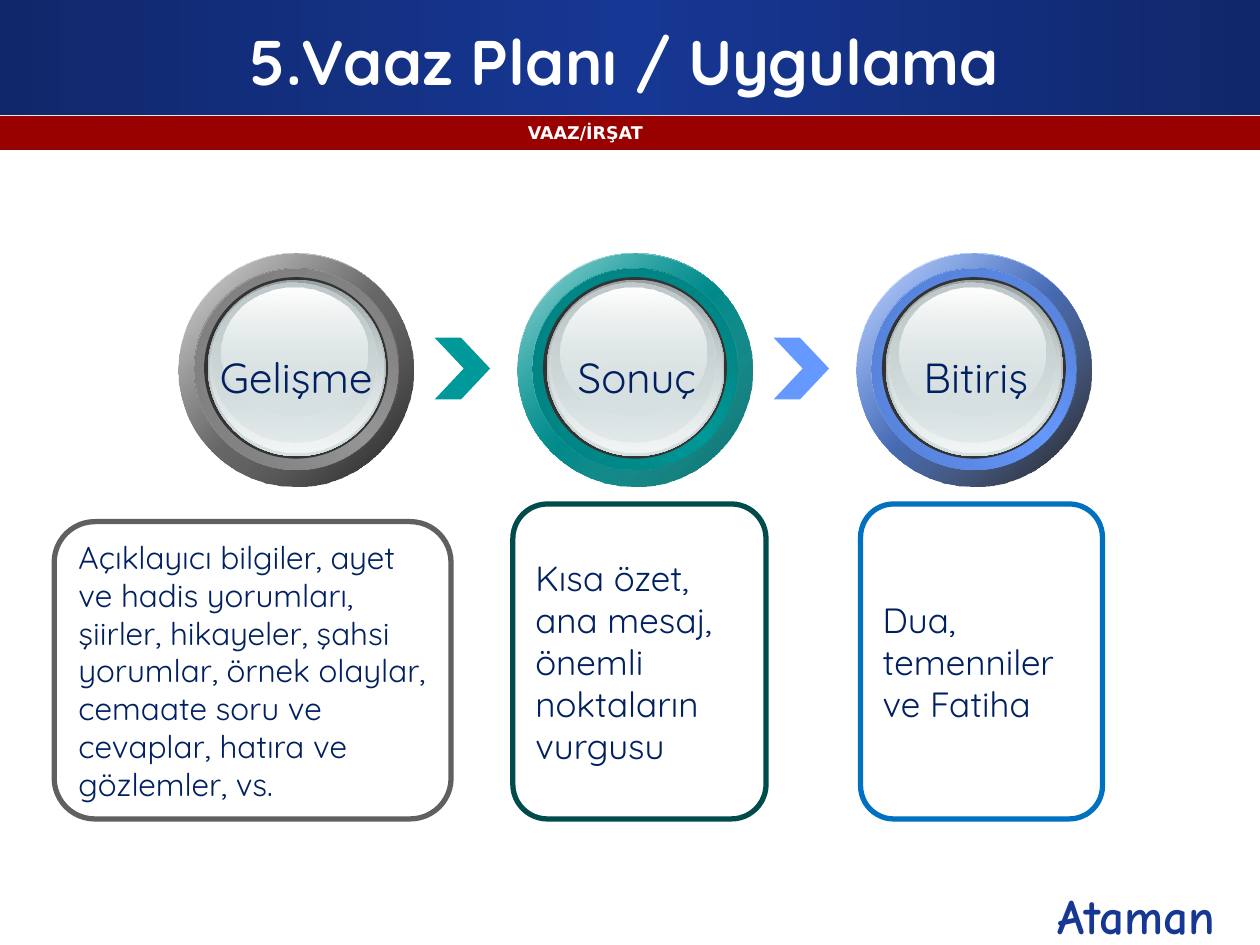
"""Build the sermon plan slide: three glossy stages with their descriptions."""
from dataclasses import dataclass
from typing import NamedTuple, Optional

from lxml.etree import SubElement
from pptx import Presentation
from pptx.dml.color import RGBColor
from pptx.enum.shapes import MSO_SHAPE
from pptx.enum.text import MSO_ANCHOR, MSO_AUTO_SIZE, PP_ALIGN
from pptx.oxml.ns import qn
from pptx.util import Inches, Pt

COLORS = {
    "white": "FFFFFF", "black": "000000", "navy": "10276A", "royal": "163794",
    "red": "990000", "text": "002060", "rim": "333333", "steel": "99A1A2",
    "mist": "D6E1E2", "frost": "F2F5F5", "haze": "C1CBCC",
    "gray": "969696", "gray mid": "737373", "gray soft": "7B7B7B", "gray box": "606060",
    "teal": "009999", "teal mid": "007575", "teal soft": "007E7E",
    "teal deep": "006D6D", "teal box": "004C4C",
    "blue": "6699FF", "blue mid": "4E75C3", "blue soft": "547ED1", "blue box": "0070C0",
}
FONT = "Quicksand"
STAGE_LEFT, STAGE_TOP, STAGE_STEP = 1.42, 2.01, 2.69


class Stop(NamedTuple):
    position: int
    color: str
    opacity: int = 100


class Area(NamedTuple):
    left: float
    top: float
    width: float
    height: float

    def shifted(self, left: float, top: float) -> "Area":
        return Area(self.left + left, self.top + top, self.width, self.height)

    def lengths(self) -> list:
        return [Inches(value) for value in self]


class Layer(NamedTuple):
    area: Area
    stops: list
    angle: int = 0


@dataclass
class Stage:
    label: str
    label_area: Area
    hue: str
    shade: Stop
    detail: str
    detail_size: int
    box: Area


STAGES = [
    Stage("Gelişme", Area(1.59, 2.74, 1.52, 0.5), "gray", Stop(100, "black", 90),
          "Açıklayıcı bilgiler, ayet ve hadis yorumları, şiirler, hikayeler, şahsi yorumlar, "
          "örnek olaylar, cemaate soru ve cevaplar, hatıra ve gözlemler, vs.",
          18, Area(0.43, 4.14, 3.15, 2.36)),
    Stage("Sonuç", Area(4.44, 2.74, 1.23, 0.5), "teal", Stop(100, "teal deep"),
          "Kısa özet, ana mesaj, önemli noktaların vurgusu",
          20, Area(4.07, 4, 2.01, 2.5)),
    Stage("Bitiriş", Area(7.17, 2.74, 1.15, 0.5), "blue", Stop(100, "black", 90),
          "Dua, temenniler ve Fatiha", 20, Area(6.83, 4, 1.92, 2.5)),
]

LENS = [
    Layer(Area(0.23, 0.21, 1.41, 1.4), [Stop(0, "steel"), Stop(100, "mist")], 90),
    Layer(Area(0.24, 0.22, 1.38, 1.36), [Stop(0, "mist", 0), Stop(100, "frost")], 90),
    Layer(Area(0.26, 0.23, 1.31, 1.27), [Stop(0, "haze"), Stop(100, "mist", 48)], 90),
    Layer(Area(0.34, 0.27, 1.16, 1.03), [Stop(0, "white"), Stop(100, "mist", 38)], 90),
]


def rgb(color: str) -> RGBColor:
    return RGBColor.from_string(COLORS[color])


def paint(shape, stops: list, angle: int) -> None:
    """Fill with one solid colour or with a clockwise-angled gradient."""
    if len(stops) == 1:
        shape.fill.solid()
        shape.fill.fore_color.rgb = rgb(stops[0].color)
        return
    shape.fill.gradient()
    shape.fill.gradient_angle = -angle % 360
    stop_list = next(shape.element.iter(qn("a:gsLst")))
    for preset in list(stop_list):
        stop_list.remove(preset)
    for stop in stops:
        mark = SubElement(stop_list, qn("a:gs"), pos=str(stop.position * 1000))
        tone = SubElement(mark, qn("a:srgbClr"), val=COLORS[stop.color])
        if stop.opacity < 100:
            SubElement(tone, qn("a:alpha"), val=str(stop.opacity * 1000))


def add_figure(slide, preset: MSO_SHAPE, area: Area, stops: list, angle: int = 0,
               adjustment: Optional[float] = None):
    """Add a preset shape without outline or shadow."""
    figure = slide.shapes.add_shape(preset, *area.lengths())
    figure.shadow.inherit = False
    figure.line.fill.background()
    if adjustment is not None:
        figure.adjustments[0] = adjustment
    if stops:
        paint(figure, stops, angle)
    else:
        figure.fill.background()
    return figure


def write(shape, wording: str, size: int, color: str, align: PP_ALIGN,
          font: str = FONT, bold: bool = False, wrap: bool = True) -> None:
    """Set the wording of a shape and format it."""
    frame = shape.text_frame
    frame.text = wording
    frame.word_wrap = wrap
    paragraph = frame.paragraphs[0]
    paragraph.alignment = align
    for run in paragraph.runs:
        run.font.name = font
        run.font.size = Pt(size)
        run.font.bold = bold
        run.font.color.rgb = rgb(color)


def add_header(slide) -> None:
    """Draw the banner, the strip, the title and the signature."""
    banner = [Stop(0, "navy"), Stop(50, "royal"), Stop(100, "navy")]
    add_figure(slide, MSO_SHAPE.RECTANGLE, Area(0, 0, 10, 0.91), banner)
    add_figure(slide, MSO_SHAPE.RECTANGLE, Area(0, 0.92, 10, 0.27), [Stop(0, "red")])
    signature = slide.shapes.add_textbox(*Area(6.57, 6.98, 3.17, 0.35).lengths())
    write(signature, "Ataman", 28, "royal", PP_ALIGN.RIGHT, "Comic Neue", True)
    subject = slide.shapes.add_textbox(*Area(0.02, 0.92, 9.25, 0.25).lengths())
    write(subject, "VAAZ/İRŞAT", 10, "white", PP_ALIGN.CENTER, "DejaVu Sans", True)

    title = slide.shapes.title
    slide.shapes.element.append(title.element)
    title.left, title.top, title.width, title.height = Area(0.33, 0.17, 9.25, 0.62).lengths()
    write(title, "5.Vaaz Planı / Uygulama", 36, "white", PP_ALIGN.CENTER, bold=True)
    title.text_frame.vertical_anchor = MSO_ANCHOR.MIDDLE
    title.text_frame.auto_size = MSO_AUTO_SIZE.NONE


def ring_layers(stage: Stage) -> list:
    """Return the coloured ring and dark rim around a lens, back to front."""
    hue, mid, soft = stage.hue, f"{stage.hue} mid", f"{stage.hue} soft"
    outer, inner = Area(0, 0, 1.86, 1.85), Area(0.12, 0.12, 1.62, 1.6)
    return [
        Layer(outer, [Stop(0, "white"), Stop(50, hue), Stop(100, "white")], 45),
        Layer(outer, [Stop(0, hue, 32), stage.shade], 45),
        Layer(inner, [Stop(0, mid), Stop(50, hue), Stop(100, mid)], 315),
        Layer(inner, [Stop(0, soft), Stop(100, hue, 0)], 45),
        Layer(Area(0.2, 0.19, 1.46, 1.44), [Stop(0, "rim")]),
    ]


def add_stage(slide, stage: Stage, index: int) -> None:
    """Draw one stage: description box, incoming chevron, button and label."""
    box = add_figure(slide, MSO_SHAPE.ROUNDED_RECTANGLE, stage.box, [], adjustment=0.137)
    box.line.color.rgb = rgb(f"{stage.hue} box")
    box.line.width = Pt(3)
    write(box, stage.detail, stage.detail_size, "text", PP_ALIGN.LEFT)
    box.text_frame.vertical_anchor = MSO_ANCHOR.MIDDLE

    left = STAGE_LEFT + index * STAGE_STEP
    if index:
        add_figure(slide, MSO_SHAPE.CHEVRON, Area(left - 0.66, 2.68, 0.44, 0.49),
                   [Stop(0, stage.hue)], adjustment=0.525)
    for layer in ring_layers(stage) + LENS:
        add_figure(slide, MSO_SHAPE.OVAL, layer.area.shifted(left, STAGE_TOP),
                   layer.stops, layer.angle)
    label = slide.shapes.add_textbox(*stage.label_area.lengths())
    write(label, stage.label, 24, "text", PP_ALIGN.CENTER, wrap=False)
    label.text_frame.auto_size = MSO_AUTO_SIZE.SHAPE_TO_FIT_TEXT


def main() -> None:
    """Build and save the presentation."""
    deck = Presentation()
    deck.slide_width, deck.slide_height = Inches(10), Inches(7.5)
    slide = deck.slides.add_slide(deck.slide_layouts.get_by_name("Title Only"))
    add_header(slide)
    for index, stage in enumerate(STAGES):
        add_stage(slide, stage, index)
    deck.save("out.pptx")


if __name__ == "__main__":
    main()
